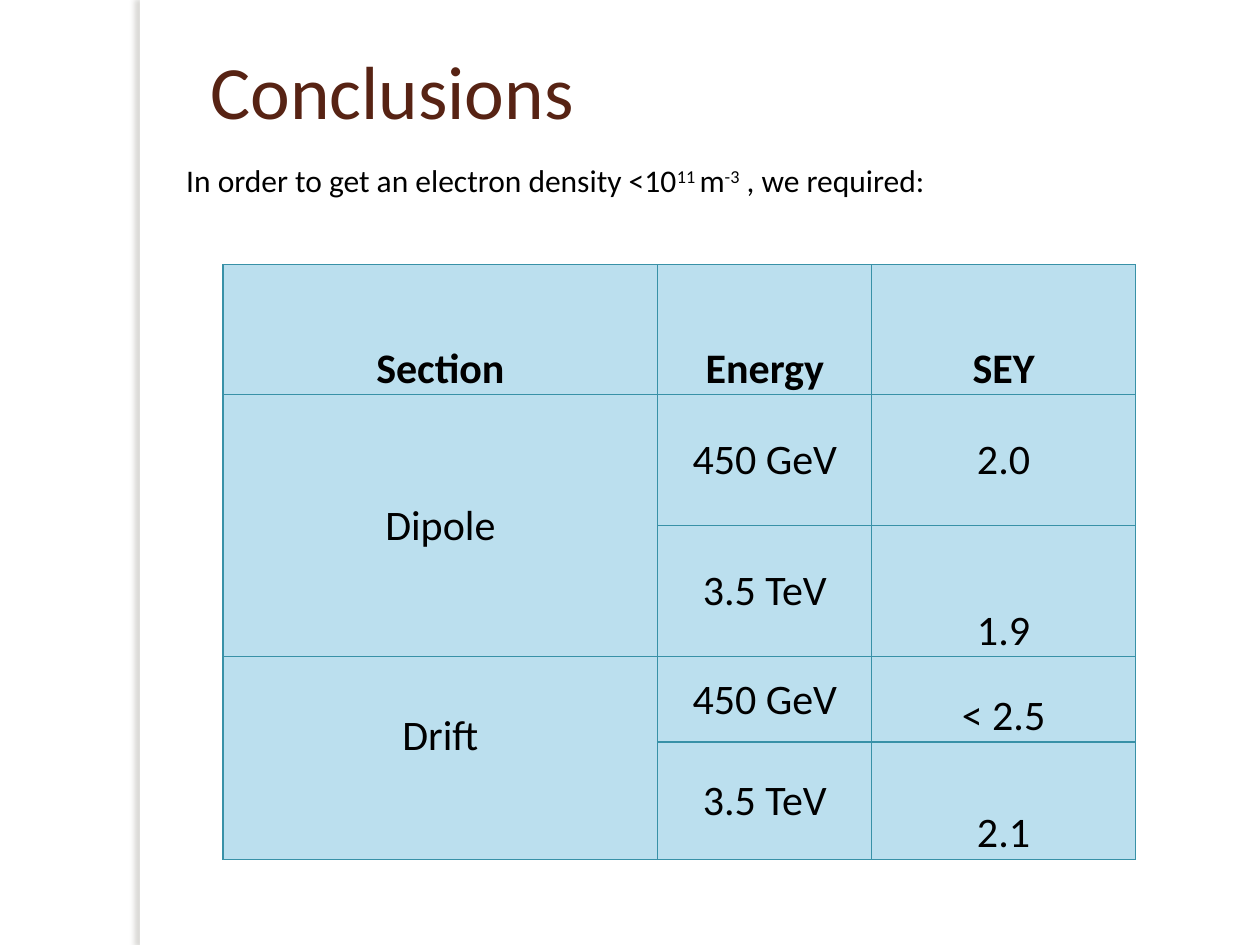
from lxml.etree import SubElement as Sub
from pptx import Presentation
from pptx.dml.color import RGBColor
from pptx.enum.shapes import MSO_SHAPE as Kind
from pptx.enum.text import MSO_ANCHOR as Anchor, MSO_AUTO_SIZE as Fit, PP_ALIGN as Align
from pptx.oxml.ns import qn
from pptx.util import Inches, Pt

TITLE = "Conclusions"
LEAD = [("In order to get an electron density <10", 0), ("11 ", 30),
        ("m", 0), ("-3", 30), (" , we required:", 0)]
ROWS = [("Section", "Energy", "SEY"),
        ("Dipole", "450 GeV", "2.0"),
        ("", "3.5 TeV", "1.9"),
        ("Drift", "450 GeV", "< 2.5"),
        ("", "3.5 TeV", "2.1")]
WIDTHS = [3.45, 1.7, 2.09]
HEIGHTS = [1.03, 1.04, 1.04, 0.68, 0.93]
LOW = {(0, 0), (0, 1), (0, 2), (2, 2), (3, 2), (4, 2)}
MERGED = [1, 3]
FACE, INK, BROWN, SKY, EDGE = "Calibri", "000000", "572314", "BBDFEE", "3891A7"


def tint(color, code):
    color.rgb = RGBColor.from_string(code)


def style(run, size, code=INK, bold=False):
    font = run.font
    font.name, font.size, font.bold = FACE, Pt(size), bold
    tint(font.color, code)


def paint(fill, code):
    fill.solid()
    tint(fill.fore_color, code)


def box(cell):
    props = cell._tc.get_or_add_tcPr()
    for spot, side in enumerate(("lnL", "lnR", "lnT", "lnB")):
        line = props.makeelement(qn("a:" + side), {"w": str(Pt(0.75))})
        solid = Sub(line, qn("a:solidFill"))
        Sub(solid, qn("a:srgbClr"), val=EDGE)
        props.insert(spot, line)


def shade(shape):
    effects = Sub(shape._element.spPr, qn("a:effectLst"))
    glow = Sub(effects, qn("a:outerShdw"), blurRad=str(Pt(3)), dist=str(Pt(3)),
               dir="10800000", algn="tl", rotWithShape="0")
    color = Sub(glow, qn("a:srgbClr"), val="736F63")
    Sub(color, qn("a:alpha"), val="25000")


def place(shape, *spot):
    shape.left, shape.top, shape.width, shape.height = map(Inches, spot)


def fill_table(table):
    table.first_row = table.horz_banding = False
    for col, width in zip(table.columns, WIDTHS):
        col.width = Inches(width)
    for row, height in zip(table.rows, HEIGHTS):
        row.height = Inches(height)
    for r, words in enumerate(ROWS):
        for c, word in enumerate(words):
            cell = table.cell(r, c)
            cell.vertical_anchor = Anchor.BOTTOM if (r, c) in LOW else Anchor.MIDDLE
            cell.margin_left = cell.margin_right = cell.margin_top = Inches(0.01)
            cell.margin_bottom = Inches(0.36 if word == "Drift" else 0)
            paint(cell.fill, SKY)
            box(cell)
            if word:
                para = cell.text_frame.paragraphs[0]
                para.text, para.alignment = word, Align.CENTER
                style(para.runs[0], 24, bold=r == 0)
    for r in MERGED:
        table.cell(r, 0).merge(table.cell(r + 1, 0))


deck = Presentation()
deck.slide_width, deck.slide_height = Inches(10), Inches(7.5)
slide = deck.slides.add_slide(deck.slide_layouts[5])
shapes = slide.shapes
paint(slide.background.fill, "FFFFFF")

strip = shapes.add_shape(Kind.RECTANGLE, *map(Inches, (1.11, 0, 0.08, 7.5)))
paint(strip.fill, "FFFFFF")
strip.line.fill.background()
shade(strip)

grid = shapes.add_table(len(ROWS), len(WIDTHS),
                        *map(Inches, (1.77, 2.1, sum(WIDTHS), sum(HEIGHTS))))
fill_table(grid.table)

title = shapes.title
place(title, 1.57, 0.3, 8.2, 1.25)
frame = title.text_frame
frame.text = TITLE
frame.auto_size, frame.vertical_anchor = Fit.NONE, Anchor.TOP
frame.paragraphs[0].alignment = Align.LEFT
style(frame.paragraphs[0].runs[0], 43, BROWN)

lead = shapes.add_textbox(*map(Inches, (1.38, 1.23, 8.03, 0.4))).text_frame
lead.word_wrap = True
for word, lift in LEAD:
    run = lead.paragraphs[0].add_run()
    run.text = word
    style(run, 18)
    if lift:
        run._r.get_or_add_rPr().set("baseline", str(lift * 1000))

deck.save("out.pptx")
